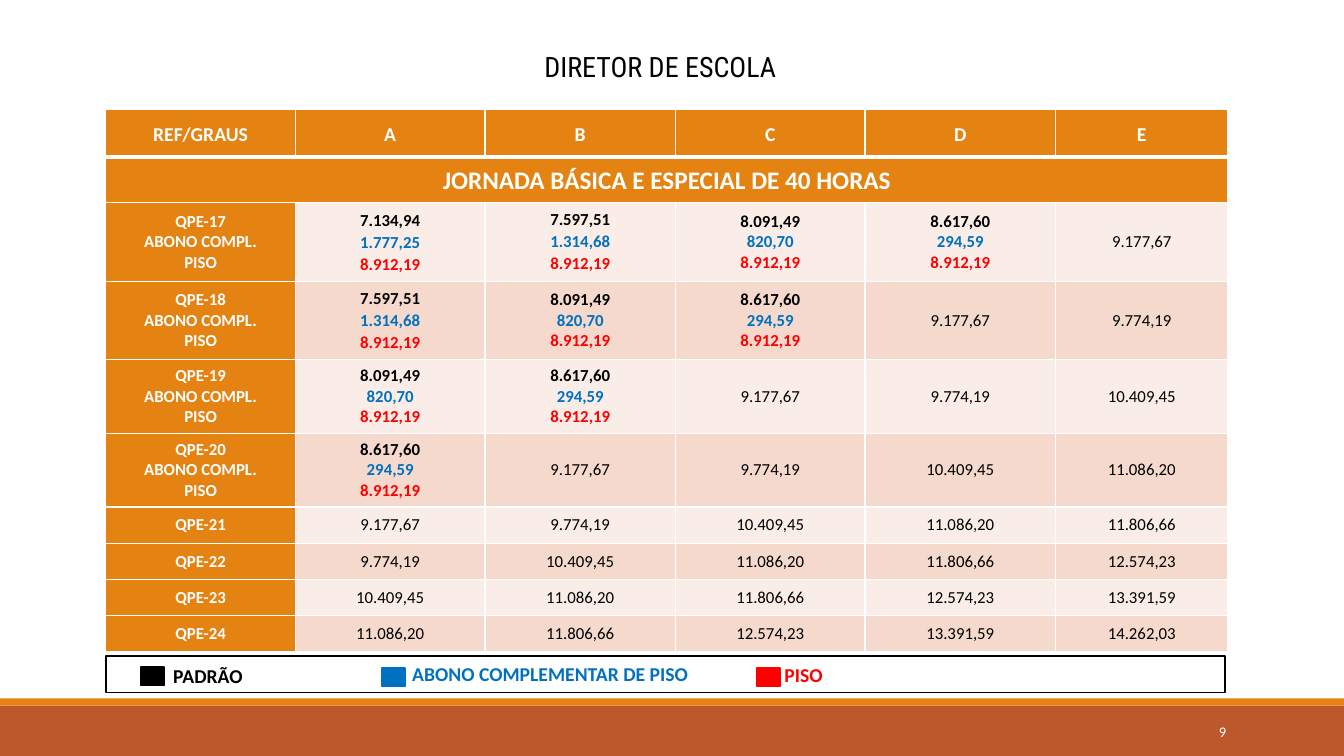
from dataclasses import dataclass
from typing import Any, Optional

from lxml.etree import SubElement
from pptx import Presentation
from pptx.dml.color import RGBColor
from pptx.enum.shapes import MSO_SHAPE
from pptx.enum.text import MSO_ANCHOR, PP_ALIGN
from pptx.oxml.ns import qn
from pptx.util import Inches, Pt


@dataclass(frozen=True)
class Theme:
    white: str = "FFFFFF"
    black: str = "000000"
    blue: str = "0070C0"
    red: str = "FF0000"
    orange: str = "E48312"
    rust: str = "BD582C"
    bands: tuple[str, str] = ("FAEDE7", "F5D9CC")
    body_font: str = "Calibri"
    title_font: str = "Roboto Condensed"
    title_size: float = 20
    journey_size: float = 18
    heading_size: float = 14
    value_size: float = 12
    number_size: float = 10.5


THEME = Theme()


@dataclass(frozen=True)
class Line:
    text: str
    color: str
    size: float = THEME.value_size
    bold: bool = True
    spacing: float = 1.0
    align: PP_ALIGN = PP_ALIGN.CENTER
    font: str = THEME.body_font


@dataclass(frozen=True)
class Box:
    left: float
    top: float
    width: float
    height: float

    def lengths(self) -> tuple:
        return tuple(Inches(n) for n in (self.left, self.top, self.width, self.height))


@dataclass(frozen=True)
class LegendItem:
    color: str
    swatch: Box
    label: str = ""
    label_box: Optional[Box] = None


# Salary scale: each reference starts one step further along it
SCALE = (7134.94, 7597.51, 8091.49, 8617.60, 9177.67, 9774.19,
         10409.45, 11086.20, 11806.66, 12574.23, 13391.59, 14262.03)
FLOOR = 8912.19
FIRST_REFERENCE = 17
GRADES = "ABCDE"
COLUMN_WIDTHS = (1.88, 1.88, 1.89, 1.88, 1.89, 1.71)
ROW_HEIGHTS = (0.47, 0.45, 0.78, 0.78, 0.73, 0.73) + (0.36,) * 4
LOOSE = 1.07
CELL_FORMAT = {"vertical_anchor": MSO_ANCHOR.MIDDLE,
               "margin_left": Inches(0.07), "margin_right": Inches(0.07),
               "margin_top": 0, "margin_bottom": 0}
LEGEND = (
    LegendItem(THEME.black, Box(1.4, 6.62, 0.23, 0.18), "PADRÃO", Box(1.62, 6.54, 1.2, 0.34)),
    LegendItem(THEME.blue, Box(3.79, 6.63, 0.23, 0.18), "ABONO COMPLEMENTAR DE PISO",
               Box(3.99, 6.52, 3.38, 0.34)),
    LegendItem(THEME.red, Box(7.51, 6.63, 0.23, 0.18)),
)


def apply_format(target: Any, values: dict[str, Any]) -> None:
    for name, value in values.items():
        setattr(target, name, value)


def write_lines(text_frame: Any, lines: list[Line]) -> None:
    for index, line in enumerate(lines):
        paragraph = text_frame.add_paragraph() if index else text_frame.paragraphs[0]
        apply_format(paragraph, {"alignment": line.align, "line_spacing": line.spacing})
        run = paragraph.add_run()
        run.text = line.text
        apply_format(run.font, {"name": line.font, "size": Pt(line.size), "bold": line.bold})
        run.font.color.rgb = RGBColor.from_string(line.color)


def add_rectangle(slide: Any, box: Box, fill: str, outline: Optional[str] = None) -> Any:
    shape = slide.shapes.add_shape(MSO_SHAPE.RECTANGLE, *box.lengths())
    shape.shadow.inherit = False
    shape.fill.solid()
    shape.fill.fore_color.rgb = RGBColor.from_string(fill)
    if outline:
        shape.line.color.rgb = RGBColor.from_string(outline)
        shape.line.width = Pt(1.25)
    else:
        shape.line.fill.background()
    return shape


def add_text(slide: Any, box: Box, line: Line, anchor: MSO_ANCHOR = MSO_ANCHOR.TOP) -> None:
    text_frame = slide.shapes.add_textbox(*box.lengths()).text_frame
    apply_format(text_frame, {"word_wrap": True, "vertical_anchor": anchor})
    write_lines(text_frame, [line])


def fill_cell(cell: Any, color: str, lines: list[Line], bottom_border: float = 1) -> None:
    apply_format(cell, CELL_FORMAT)
    properties = cell._tc.get_or_add_tcPr()
    for side, points in (("L", 1), ("R", 1), ("T", 1), ("B", bottom_border)):
        border = SubElement(properties, qn(f"a:ln{side}"), w=str(Pt(points)))
        SubElement(SubElement(border, qn("a:solidFill")), qn("a:srgbClr"), val=THEME.white)
    cell.fill.solid()
    cell.fill.fore_color.rgb = RGBColor.from_string(color)
    write_lines(cell.text_frame, lines)


def money(value: float) -> str:
    return f"{value:,.2f}".translate(str.maketrans(",.", ".,"))


def salary_lines(salary: float) -> list[Line]:
    if salary >= FLOOR:
        return [Line(money(salary), THEME.black, bold=False)]
    supplement = FLOOR - salary
    spacing = LOOSE if supplement >= 1000 else 1.0
    return [Line(money(salary), THEME.black, spacing=LOOSE if salary == SCALE[0] else 1.0),
            Line(money(supplement), THEME.blue, spacing=spacing),
            Line(money(FLOOR), THEME.red, spacing=spacing)]


def add_salary_table(slide: Any) -> None:
    box = Box(1.05, 1.09, sum(COLUMN_WIDTHS), sum(ROW_HEIGHTS))
    table = slide.shapes.add_table(len(ROW_HEIGHTS), len(COLUMN_WIDTHS), *box.lengths()).table
    apply_format(table, {"first_row": False, "horz_banding": False})
    for column, width in zip(table.columns, COLUMN_WIDTHS):
        column.width = Inches(width)
    for row, height in zip(table.rows, ROW_HEIGHTS):
        row.height = Inches(height)

    # Heading rows
    for column, heading in enumerate(("REF/GRAUS", *GRADES)):
        line = Line(heading, THEME.white, THEME.heading_size, spacing=LOOSE)
        fill_cell(table.cell(0, column), THEME.orange, [line], bottom_border=3)
    table.cell(1, 0).merge(table.cell(1, len(GRADES)))
    journey = Line("JORNADA BÁSICA E ESPECIAL DE 40 HORAS", THEME.white,
                   THEME.journey_size, spacing=LOOSE)
    fill_cell(table.cell(1, 0), THEME.orange, [journey])

    # Reference rows
    for step in range(len(ROW_HEIGHTS) - 2):
        labels = [f"QPE-{FIRST_REFERENCE + step}"]
        if SCALE[step] < FLOOR:
            labels += ["ABONO COMPL.", "PISO"]
        fill_cell(table.cell(step + 2, 0), THEME.orange,
                  [Line(label, THEME.white) for label in labels])
        for grade in range(len(GRADES)):
            fill_cell(table.cell(step + 2, grade + 1), THEME.bands[step % 2],
                      salary_lines(SCALE[step + grade]))


def add_legend(slide: Any) -> None:
    frame = add_rectangle(slide, Box(1.05, 6.51, 11.1, 0.36), THEME.white, THEME.black)
    apply_format(frame.text_frame, {"margin_left": Inches(6.73), "word_wrap": True,
                                    "vertical_anchor": MSO_ANCHOR.MIDDLE})
    write_lines(frame.text_frame,
                [Line("PISO", THEME.red, THEME.heading_size, align=PP_ALIGN.LEFT)])
    for item in LEGEND:
        add_rectangle(slide, item.swatch, item.color, item.color)
        if item.label_box:
            add_text(slide, item.label_box,
                     Line(item.label, item.color, THEME.heading_size, align=PP_ALIGN.LEFT))


def main() -> None:
    presentation = Presentation()
    apply_format(presentation, {"slide_width": Inches(13.33), "slide_height": Inches(7.5)})
    slide = presentation.slides.add_slide(presentation.slide_layouts[6])

    # Footer bands and slide number
    add_rectangle(slide, Box(0, 7, 13.33, 0.5), THEME.rust)
    add_rectangle(slide, Box(0, 6.93, 13.33, 0.07), THEME.orange)
    add_text(slide, Box(10.83, 7.06, 1.43, 0.4),
             Line("9", THEME.white, THEME.number_size, False, align=PP_ALIGN.RIGHT),
             MSO_ANCHOR.MIDDLE)

    # Title, table and legend
    add_text(slide, Box(1.02, 0.42, 11.06, 0.43),
             Line("DIRETOR DE ESCOLA", THEME.black, THEME.title_size, False, LOOSE,
                  font=THEME.title_font))
    add_salary_table(slide)
    add_legend(slide)
    presentation.save("out.pptx")


if __name__ == "__main__":
    main()
